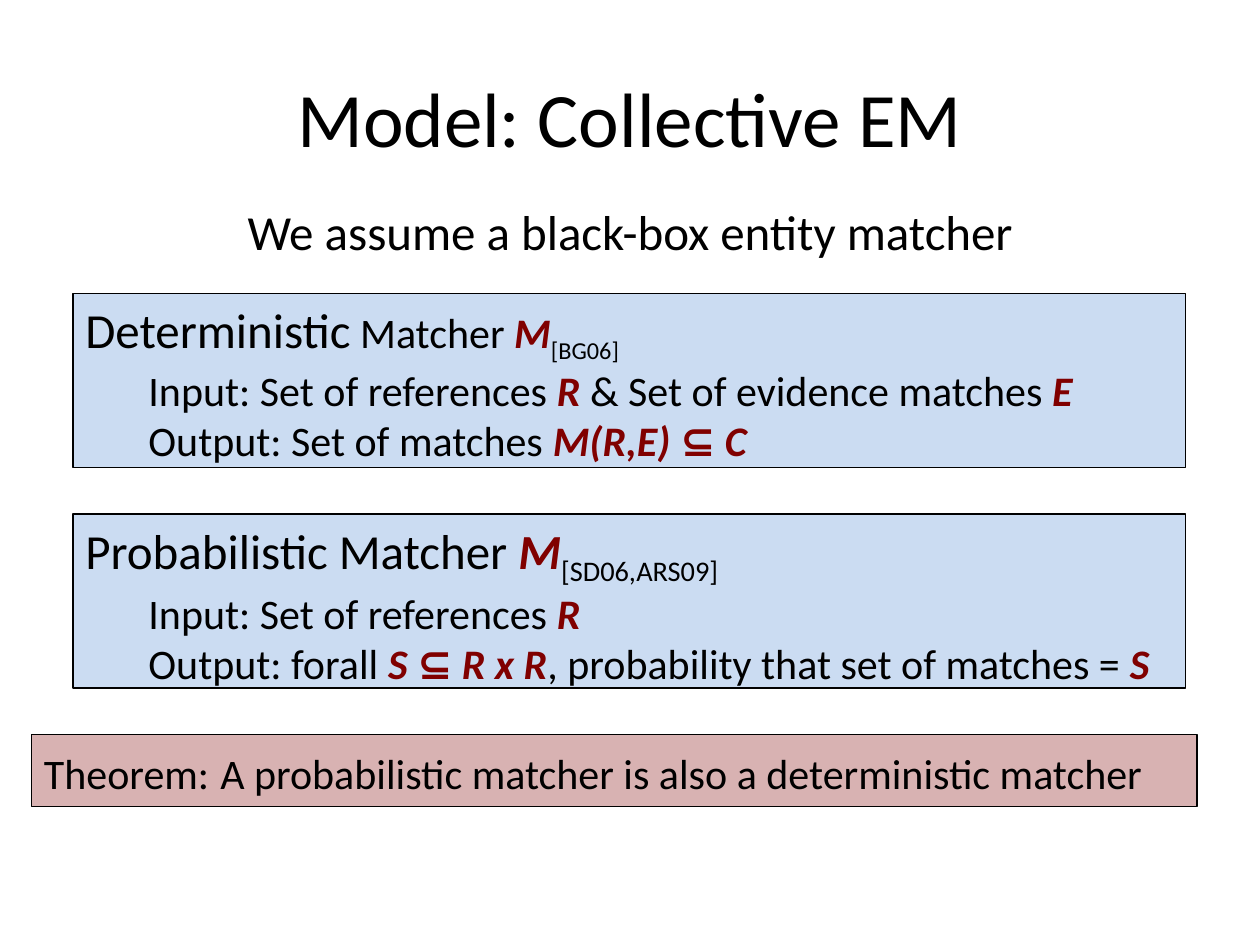
from pptx import Presentation
from pptx import util as u
from pptx.dml import color
from pptx.enum import shapes, text
from pptx.oxml import parse_xml
from pptx.oxml.ns import nsdecls, qn

BLACK = "000000"
MAROON = "800000"
BLUE = "558ED5"


def rgb(value):
    return color.RGBColor.from_string(value)


def place(shape, box):
    shape.left, shape.top, shape.width, shape.height = map(u.Inches, box)


def add_run(paragraph, words, style="plain", size=None):
    run = paragraph.add_run()
    run.text = words
    run.font.color.rgb = rgb(MAROON if style == "symbol" else BLACK)
    if size:
        run.font.size = u.Pt(size)
    if style == "symbol":
        run.font.bold = run.font.italic = True
    elif style == "subscript":
        run.font._element.set("baseline", "-25000")


def fill_paragraph(paragraph, size, runs, indent=0):
    paragraph.font.name = "Calibri"
    paragraph.font.size = u.Pt(size)
    paragraph.alignment = text.PP_ALIGN.LEFT
    paragraph._p.get_or_add_pPr().set("marL", str(u.Inches(indent)))
    for run in runs:
        add_run(paragraph, *run)


def fill_heading(shape, box, words, size):
    place(shape, box)
    paragraph = shape.text_frame.paragraphs[0]
    paragraph.text = words
    paragraph.alignment = text.PP_ALIGN.CENTER
    paragraph.font.name = "Calibri"
    paragraph.font.size = u.Pt(size)
    paragraph.font.color.rgb = rgb(BLACK)
    return paragraph


def add_panel(slide, box, fill, lines):
    shape = slide.shapes.add_shape(shapes.MSO_SHAPE.RECTANGLE, *map(u.Inches, box))
    shape.shadow.inherit = False
    shape.fill.solid()
    shape.fill.fore_color.rgb = rgb(fill)
    fill_color = shape._element.spPr.find(qn("a:solidFill"))[0]
    fill_color.append(parse_xml(f'<a:alpha {nsdecls("a")} val="30000"/>'))
    shape.line.color.rgb = rgb(BLACK)
    shape.line.width = u.Pt(0.75)
    frame = shape.text_frame
    frame.word_wrap = True
    frame.vertical_anchor = text.MSO_ANCHOR.TOP
    for index, line in enumerate(lines):
        paragraph = frame.add_paragraph() if index else frame.paragraphs[0]
        fill_paragraph(paragraph, *line)


def add_headings(slide):
    title, body = slide.placeholders
    fill_heading(title, (0.5, 0.3, 9, 1.25), "Model: Collective EM", 44)
    paragraph = fill_heading(body, (0.5, 1.55, 9, 0.78),
                             "We assume a black-box entity matcher", 28)
    properties = paragraph._p.get_or_add_pPr()
    properties.set("marL", str(u.Inches(0.38)))
    properties.set("indent", str(u.Inches(-0.38)))
    properties.insert_element_before(
        parse_xml(f'<a:buNone {nsdecls("a")}/>'), "a:tabLst", "a:defRPr", "a:extLst")


def add_matchers(slide, left, top, width, height, pitch):
    deterministic = [
        (24, [("Deterministic", "plain", 28), (" Matcher ",), ("M", "symbol"),
              ("[BG06]", "subscript")]),
        (24, [("Input: Set of references ",), ("R", "symbol"),
              (" & Set of evidence matches ",), ("E", "symbol")], 0.5),
        (24, [("Output: Set of matches ",), ("M(R,E) ⊆ C", "symbol")], 0.5),
    ]
    probabilistic = [
        (28, [("Probabilistic Matcher ",), ("M", "symbol"),
              ("[SD06,ARS09]", "subscript")]),
        (24, [("Input: Set of references ",), ("R", "symbol")], 0.5),
        (24, [("Output: forall ",), ("S ⊆ R x R", "symbol"),
              (", probability that set of matches = ",), ("S", "symbol")], 0.5),
    ]
    for index, lines in enumerate((deterministic, probabilistic)):
        add_panel(slide, (left, top + index * pitch, width, height), BLUE, lines)


def add_theorem(slide, box):
    add_panel(slide, box, MAROON, [
        (24, [("Theorem:",), (" ", "plain", 28),
              ("A probabilistic matcher is also a deterministic matcher",)])])


def main():
    presentation = Presentation()
    presentation.slide_width = u.Inches(10)
    presentation.slide_height = u.Inches(7.5)
    slide = presentation.slides.add_slide(presentation.slide_layouts[1])
    add_headings(slide)
    add_matchers(slide, 0.58, 2.33, 8.83, 1.38, pitch=1.75)
    add_theorem(slide, (0.25, 5.83, 9.25, 0.57))
    presentation.save("out.pptx")


if __name__ == "__main__":
    main()
